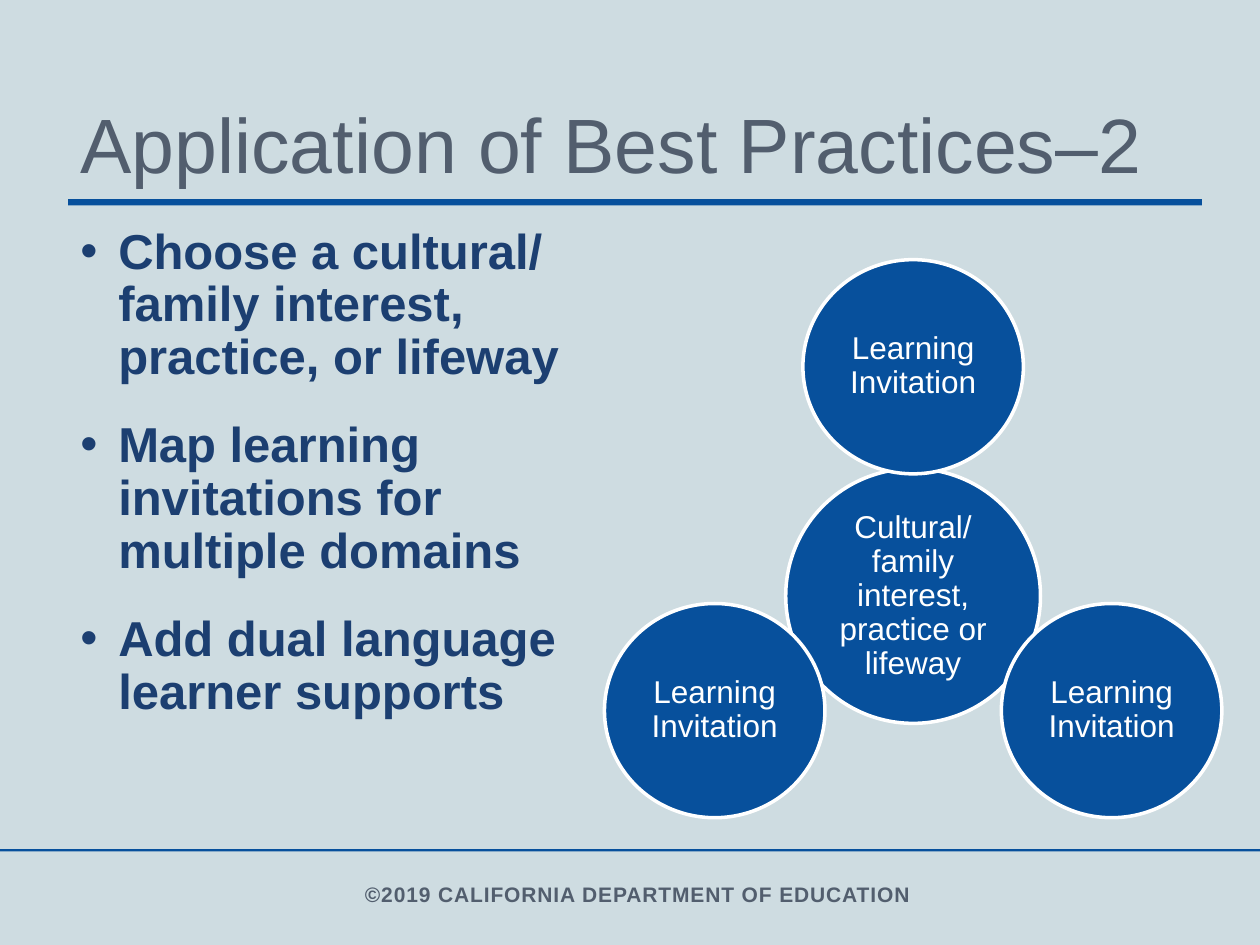
from lxml import etree
from pptx import Presentation
from pptx import util as u
from pptx.dml import color
from pptx.enum import shapes, text
from pptx.oxml import ns

COLORS = {"back": "CEDCE1", "blue": "07509C", "slate": "525E6E",
          "navy": "1C3F71", "white": "FFFFFF"}
Pt = u.Pt


def rgb(name):
    return color.RGBColor.from_string(COLORS[name])


def write_text(shape, lines, size, ink, bold=False, spacing=0.9, inset=(7.2, 3.6),
               anchor=text.MSO_ANCHOR.TOP, align=text.PP_ALIGN.LEFT,
               before=0, after=0, bullet=None, indent=0, tracking=0):
    """Fill a shape with one paragraph per line; lengths are in points."""
    frame = shape.text_frame
    frame.word_wrap = True
    frame.vertical_anchor = anchor
    frame.margin_left = frame.margin_right = Pt(inset[0])
    frame.margin_top = frame.margin_bottom = Pt(inset[1])
    for index, line in enumerate(lines):
        para = frame.paragraphs[0] if index == 0 else frame.add_paragraph()
        para.alignment = align
        para.line_spacing = spacing
        para.space_before = Pt(before if index else 0)
        para.space_after = Pt(after)
        if bullet:
            props = para._p.get_or_add_pPr()
            props.set("marL", str(Pt(indent)))
            props.set("indent", str(-Pt(indent)))
            etree.SubElement(props, ns.qn("a:buFont")).set("typeface", "Arial")
            etree.SubElement(props, ns.qn("a:buChar")).set("char", bullet)
        span = para.add_run()
        span.text = line
        span.font.name = "Arial"
        span.font.size = Pt(size)
        span.font.bold = bold
        span.font.color.rgb = rgb(ink)
        if tracking:
            span.font._element.set("spc", str(int(tracking * 100)))


deck = Presentation()
deck.slide_width, deck.slide_height = Pt(720), Pt(540)
page = deck.slides.add_slide(deck.slide_layouts[6])
page.background.fill.solid()
page.background.fill.fore_color.rgb = rgb("back")

# Rules under the title and above the footer
for left, top, width, height in [(38.9, 113.8, 648, 3.6), (0, 485.2, 720, 1.4)]:
    rule = page.shapes.add_shape(shapes.MSO_SHAPE.RECTANGLE,
                                 Pt(left), Pt(top), Pt(width), Pt(height))
    rule.shadow.inherit = False
    rule.fill.solid()
    rule.fill.fore_color.rgb = rgb("blue")
    rule.line.fill.background()

footer = page.shapes.add_textbox(Pt(60), Pt(501), Pt(609), Pt(21))
write_text(footer, ["©2019 CALIFORNIA DEPARTMENT OF EDUCATION"], 12, "slate",
           bold=True, spacing=0.95, anchor=text.MSO_ANCHOR.MIDDLE,
           align=text.PP_ALIGN.CENTER, tracking=0.5)

title = page.shapes.add_textbox(Pt(38.9), Pt(21.6), Pt(648), Pt(90))
write_text(title, ["Application of Best Practices–2"], 44, "slate",
           spacing=0.85, anchor=text.MSO_ANCHOR.BOTTOM)

body = page.shapes.add_textbox(Pt(38.9), Pt(126), Pt(318.2), Pt(349.2))
write_text(body, ["Choose a cultural/ family interest, practice, or lifeway",
                  "Map learning invitations for multiple domains",
                  "Add dual language learner supports"], 28, "navy",
           bold=True, before=15, after=5, bullet="•", indent=21.6)

# Hub circle, then three invitations around it
hub_x, hub_y = 521.8, 340.6
side_x, side_y = 113.4, 65.5
invitation = ("Learning Invitation", 126, 122.4)
circles = [(0, 0, "Cultural/ family interest, practice or lifeway", 145.6, 145.6),
           (0, -2 * side_y, *invitation),
           (side_x, side_y, *invitation),
           (-side_x, side_y, *invitation)]
for shift_x, shift_y, label, width, height in circles:
    circle = page.shapes.add_shape(
        shapes.MSO_SHAPE.OVAL, Pt(hub_x + shift_x - width / 2),
        Pt(hub_y + shift_y - height / 2), Pt(width), Pt(height))
    circle.shadow.inherit = False
    circle.fill.solid()
    circle.fill.fore_color.rgb = rgb("blue")
    circle.line.color.rgb = rgb("white")
    circle.line.width = Pt(2)
    write_text(circle, [label], 18, "white", inset=(0.9, 0.9),
               anchor=text.MSO_ANCHOR.MIDDLE, align=text.PP_ALIGN.CENTER)

deck.save("out.pptx")
